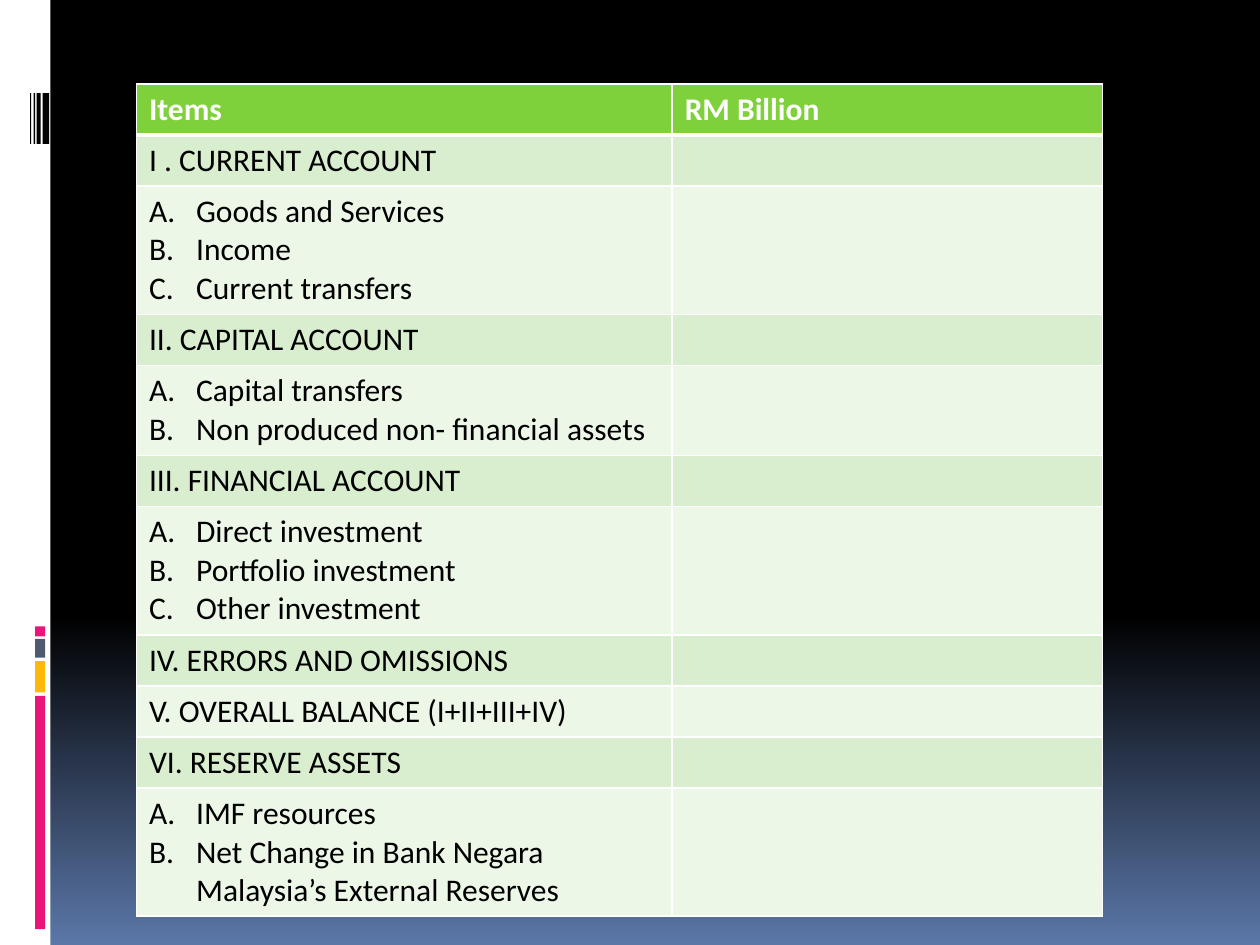
from lxml.etree import SubElement
from pptx import Presentation
from pptx.dml.color import RGBColor
from pptx.enum.shapes import MSO_SHAPE
from pptx.oxml.ns import qn
from pptx.util import Cm, Pt

WHITE = RGBColor(0xFF, 0xFF, 0xFF)
BLACK = RGBColor(0x00, 0x00, 0x00)
BLUE = RGBColor(0x5B, 0x77, 0xA8)
PINK = RGBColor(0xEA, 0x15, 0x7A)
YELLOW = RGBColor(0xFE, 0xB8, 0x0A)
SLATE = RGBColor(0x4E, 0x5B, 0x6F)
GREEN = RGBColor(0x7F, 0xD1, 0x3B)
BANDS = (RGBColor(0xD8, 0xEE, 0xCE), RGBColor(0xEC, 0xF7, 0xE8))

HEADERS = ("Items", "RM Billion")
ITEMS = [
    "I . CURRENT ACCOUNT",
    ["Goods and Services", "Income", "Current transfers"],
    "II. CAPITAL ACCOUNT",
    ["Capital transfers", "Non produced non- financial assets"],
    "III. FINANCIAL ACCOUNT",
    ["Direct investment", "Portfolio investment", "Other investment"],
    "IV. ERRORS AND OMISSIONS",
    "V. OVERALL BALANCE (I+II+III+IV)",
    "VI. RESERVE ASSETS",
    ["IMF resources", "Net Change in Bank Negara Malaysia’s External Reserves"],
]
COLUMN_WIDTHS = (10.8, 8.68)
TABLE_LEFT, TABLE_TOP = 2.75, 1.69
LINE_HEIGHT, CELL_PADDING = 0.78, 0.25
INDENT = Cm(0.95)

SIDE_BARS = [(12.63, 0.2, PINK), (12.88, 0.38, SLATE), (13.33, 0.63, YELLOW), (14.03, 4.7, PINK)]
BARCODE_STRIPES = [(0.61, 0.02), (0.68, 0.03), (0.74, 0.08), (0.86, 0.13)]


def add_bar(slide, left, top, width, height, color):
    shape = slide.shapes.add_shape(MSO_SHAPE.RECTANGLE, Cm(left), Cm(top), Cm(width), Cm(height))
    shape.shadow.inherit = False
    shape.fill.solid()
    shape.fill.fore_color.rgb = color
    shape.line.fill.background()


def write_paragraph(paragraph, text, *, color=BLACK, bold=False, hanging=True, numbered=False):
    run = paragraph.add_run()
    run.text = text
    run.font.name = "Calibri"
    run.font.size = Pt(18)
    run.font.bold = bold
    run.font.color.rgb = color
    properties = paragraph._p.get_or_add_pPr()
    if hanging:
        properties.set("marL", str(INDENT))
        properties.set("indent", str(-INDENT))
    if numbered:
        SubElement(properties, qn("a:buFont"), typeface="+mj-lt")
        SubElement(properties, qn("a:buAutoNum"), type="alphaUcPeriod")


def style_cell(cell, color, top=1, bottom=1):
    properties = cell._tc.get_or_add_tcPr()
    for side, width in (("L", 1), ("R", 1), ("T", top), ("B", bottom)):
        border = SubElement(properties, qn(f"a:ln{side}"), w=str(Pt(width)))
        fill = SubElement(border, qn("a:solidFill"))
        SubElement(fill, qn("a:srgbClr"), val=str(WHITE))
    cell.fill.solid()
    cell.fill.fore_color.rgb = color


def add_items_table(slide):
    heights = [CELL_PADDING + LINE_HEIGHT]
    for item in ITEMS:
        lines = len(item) if isinstance(item, list) else 1
        heights.append(CELL_PADDING + LINE_HEIGHT * lines)
    frame = slide.shapes.add_table(
        len(heights), len(HEADERS), Cm(TABLE_LEFT), Cm(TABLE_TOP),
        Cm(sum(COLUMN_WIDTHS)), Cm(sum(heights)),
    )
    table = frame.table
    for column, width in zip(table.columns, COLUMN_WIDTHS):
        column.width = Cm(width)
    for row, height in zip(table.rows, heights):
        row.height = Cm(height)

    for cell, header in zip(table.rows[0].cells, HEADERS):
        style_cell(cell, GREEN, bottom=3)
        write_paragraph(cell.text_frame.paragraphs[0], header, color=WHITE, bold=True, hanging=False)

    for index, item in enumerate(ITEMS):
        cells = table.rows[index + 1].cells
        for cell in cells:
            style_cell(cell, BANDS[index % 2], top=1 if index else 3)
        numbered = isinstance(item, list)
        text_frame = cells[0].text_frame
        for position, text in enumerate(item if numbered else [item]):
            paragraph = text_frame.add_paragraph() if position else text_frame.paragraphs[0]
            write_paragraph(paragraph, text, numbered=numbered)


def main():
    presentation = Presentation()
    presentation.slide_width, presentation.slide_height = Cm(25.4), Cm(19.05)
    slide = presentation.slides.add_slide(presentation.slide_layouts[6])

    background = slide.background.fill
    background.gradient()
    background.gradient_angle = 270
    for stop, position, color in zip(background.gradient_stops, (0.65, 1), (BLACK, BLUE)):
        stop.position = position
        stop.color.rgb = color

    add_bar(slide, 0, 0, 1.02, 19.05, WHITE)
    for top, height, color in SIDE_BARS:
        add_bar(slide, 0.71, top, 0.2, height, color)
    for left, width in BARCODE_STRIPES:
        add_bar(slide, left, 1.88, width, 1.02, BLACK)
    add_items_table(slide)
    presentation.save("out.pptx")


if __name__ == "__main__":
    main()
